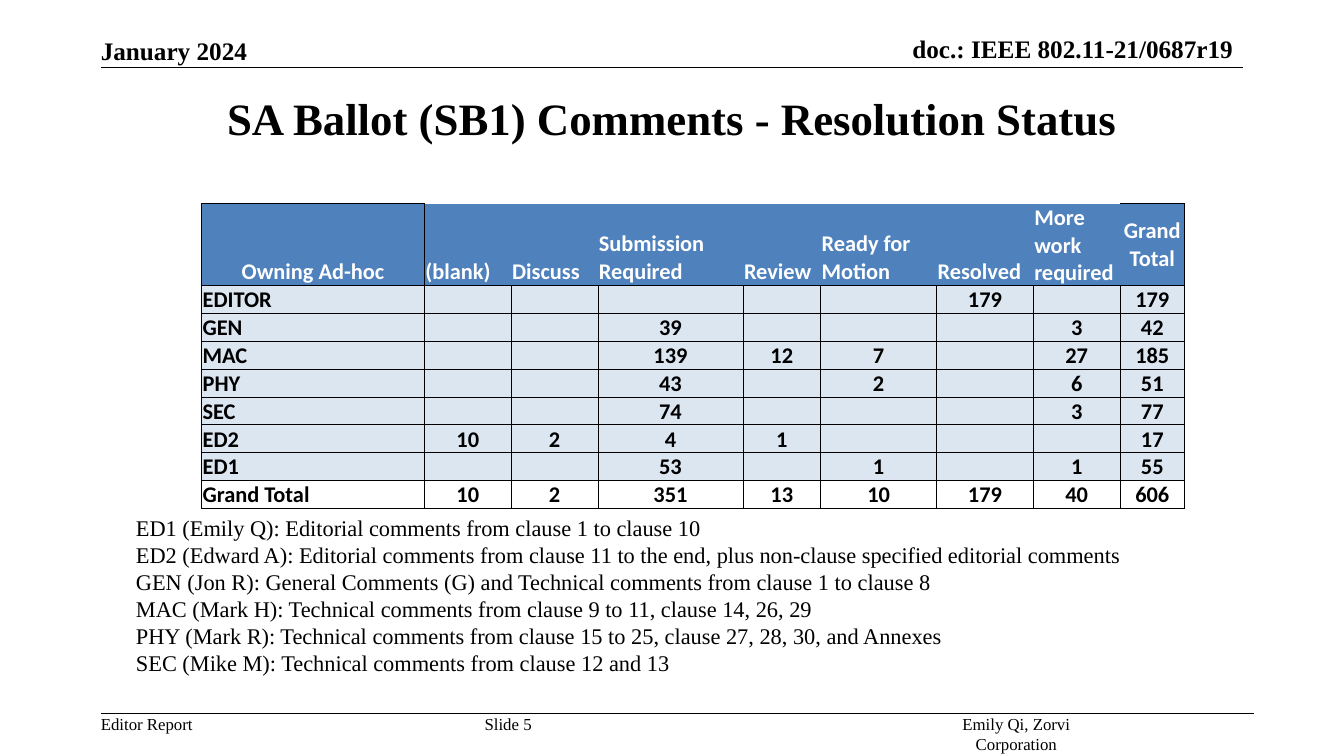
from dataclasses import dataclass

from lxml import etree
from pptx import Presentation
from pptx.dml.color import RGBColor
from pptx.enum.shapes import MSO_CONNECTOR
from pptx.enum.text import MSO_ANCHOR, MSO_AUTO_SIZE, PP_ALIGN
from pptx.oxml.ns import qn
from pptx.util import Emu, Pt

LEFT, CENTER, RIGHT = PP_ALIGN.LEFT, PP_ALIGN.CENTER, PP_ALIGN.RIGHT
TOP, MIDDLE, BOTTOM = MSO_ANCHOR.TOP, MSO_ANCHOR.MIDDLE, MSO_ANCHOR.BOTTOM
FIT_SHAPE, FIXED = MSO_AUTO_SIZE.SHAPE_TO_FIT_TEXT, MSO_AUTO_SIZE.NONE
STRAIGHT = MSO_CONNECTOR.STRAIGHT
EMU_PER_PX = 9144
TITLE_ONLY = 5


@dataclass(frozen=True)
class Theme:
    serif: str = "Times New Roman"
    sans: str = "Calibri"
    ink: str = "000000"
    paper: str = "FFFFFF"
    header: str = "4F81BD"
    band: str = "DCE6F1"
    title: int = 32
    heading: int = 18
    body: int = 16
    footer: int = 12
    rule: float = 1
    grid: float = 0.5


COLUMNS = ["Owning Ad-hoc", "(blank)", "Discuss", "Submission Required", "Review",
           "Ready for Motion", "Resolved", "More work required", "Grand Total"]
COLUMN_WIDTHS = [221, 86, 86, 144, 77, 115, 96, 86, 64]
COMMENT_COUNTS = [
    ["EDITOR", "", "", "", "", "", "179", "", "179"],
    ["GEN", "", "", "39", "", "", "", "3", "42"],
    ["MAC", "", "", "139", "12", "7", "", "27", "185"],
    ["PHY", "", "", "43", "", "2", "", "6", "51"],
    ["SEC", "", "", "74", "", "", "", "3", "77"],
    ["ED2", "10", "2", "4", "1", "", "", "", "17"],
    ["ED1", "", "", "53", "", "1", "", "1", "55"],
    ["Grand Total", "10", "2", "351", "13", "10", "179", "40", "606"],
]
OWNERS = [
    "ED1 (Emily Q): Editorial comments from clause 1 to clause 10",
    "ED2 (Edward A): Editorial comments from clause 11 to the end, plus non-clause specified editorial comments",
    "GEN (Jon R): General Comments (G) and Technical comments from clause 1 to clause 8",
    "MAC (Mark H): Technical comments from clause 9 to 11, clause 14, 26, 29",
    "PHY (Mark R): Technical comments from clause 15 to 25, clause 27, 28, 30, and Annexes",
    "SEC (Mike M): Technical comments from clause 12 and 13",
]


def px(length):
    return Emu(length * EMU_PER_PX)


class SlideBuilder:
    def __init__(self, slide, theme):
        self.slide = slide
        self.theme = theme

    def add_text(self, paragraph, text, size, align=LEFT, bold=False, font=None, color=None):
        paragraph.alignment = align
        run = paragraph.add_run()
        run.text = text
        run.font.name = font or self.theme.serif
        run.font.size = Pt(size)
        run.font.bold = bold
        run.font.color.rgb = RGBColor.from_string(color or self.theme.ink)

    def title(self, text, left, top, width, height):
        shape = self.slide.shapes.title
        shape.left, shape.top, shape.width, shape.height = map(px, (left, top, width, height))
        frame = shape.text_frame
        frame.auto_size = FIXED
        frame.vertical_anchor = MIDDLE
        self.add_text(frame.paragraphs[0], text, self.theme.title, CENTER, True)

    def label(self, text, left, top, width, height, size, align=LEFT, anchor=TOP, bold=False):
        frame = self.slide.shapes.add_textbox(*map(px, (left, top, width, height))).text_frame
        frame.margin_left = frame.margin_right = frame.margin_top = frame.margin_bottom = 0
        frame.word_wrap = False
        frame.auto_size = FIT_SHAPE
        frame.vertical_anchor = anchor
        self.add_text(frame.paragraphs[0], text, size, align, bold)

    def paragraphs(self, lines, left, top, width, height):
        frame = self.slide.shapes.add_textbox(*map(px, (left, top, width, height))).text_frame
        frame.word_wrap = True
        frame.vertical_anchor = MIDDLE
        for index, line in enumerate(lines):
            paragraph = frame.add_paragraph() if index else frame.paragraphs[0]
            self.add_text(paragraph, line, self.theme.body)

    def rule(self, left, right, top):
        line = self.slide.shapes.add_connector(STRAIGHT, *map(px, (left, top, right, top)))
        line.line.color.rgb = RGBColor.from_string(self.theme.ink)
        line.line.width = Pt(self.theme.rule)
        etree.SubElement(line._element.spPr, qn("a:effectLst"))

    def borders(self, cell, visible):
        properties = cell._tc.get_or_add_tcPr()
        for side in "LRTB":
            border = etree.SubElement(properties, qn(f"a:ln{side}"), w=str(Pt(self.theme.grid)))
            if side in visible:
                fill = etree.SubElement(border, qn("a:solidFill"))
                etree.SubElement(fill, qn("a:srgbClr"), val=self.theme.ink)
            else:
                etree.SubElement(border, qn("a:noFill"))

    def cell(self, cell, text, align, anchor, color, fill, visible):
        cell.margin_left = cell.margin_right = cell.margin_top = px(1)
        cell.margin_bottom = 0
        cell.vertical_anchor = anchor
        self.borders(cell, visible)
        if fill:
            cell.fill.solid()
            cell.fill.fore_color.rgb = RGBColor.from_string(fill)
        else:
            cell.fill.background()
        paragraph = cell.text_frame.paragraphs[0]
        if text:
            self.add_text(paragraph, text, self.theme.body, align, True, self.theme.sans, color)
        else:
            etree.SubElement(paragraph._p, qn("a:endParaRPr"), sz=str(self.theme.body * 100))

    def table(self, header, rows, widths, left, top, header_height, row_height):
        height = header_height + row_height * len(rows)
        table = self.slide.shapes.add_table(
            len(rows) + 1, len(header), *map(px, (left, top, sum(widths), height))).table
        table.horz_banding = False
        for column, width in zip(table.columns, widths):
            column.width = px(width)
        for index, row in enumerate(table.rows):
            row.height = px(row_height if index else header_height)
        last = len(header) - 1
        header_borders = {0: "LRTB", 1: "LB", last: "TRB"}
        for index, text in enumerate(header):
            self.cell(table.cell(0, index), text, CENTER if index in (0, last) else LEFT,
                      MIDDLE if index == last else BOTTOM, self.theme.paper,
                      self.theme.header, header_borders.get(index, "B"))
        for row_index, row in enumerate(rows, 1):
            fill = self.theme.band if row_index < len(rows) else None
            for index, text in enumerate(row):
                self.cell(table.cell(row_index, index), text, CENTER if index else LEFT,
                          BOTTOM, self.theme.ink, fill, "LRTB")


def main():
    presentation = Presentation()
    presentation.slide_width, presentation.slide_height = px(1333), px(750)
    slide = presentation.slides.add_slide(presentation.slide_layouts[TITLE_ONLY])
    theme = Theme()
    builder = SlideBuilder(slide, theme)
    builder.label("doc.: IEEE 802.11-21/0687r19", 851, 33, 372, 30, theme.heading, RIGHT, BOTTOM, True)
    builder.label("January 2024", 100, 35, 147, 30, theme.heading, LEFT, BOTTOM, True)
    builder.rule(100, 1233, 67)
    builder.title("SA Ballot (SB1) Comments - Resolution Status", 100, 58, 1133, 117)
    builder.table(COLUMNS, COMMENT_COUNTS, COLUMN_WIDTHS, 200, 202, 80, 27)
    builder.paragraphs(OWNERS, 125, 499, 1158, 183)
    builder.rule(100, 1244, 708)
    builder.label("Editor Report", 100, 708, 92, 20, theme.footer)
    builder.label("Slide 5", 475, 708, 58, 20, theme.footer, CENTER)
    builder.label("Emily Qi, Zorvi Corporation", 914, 708, 188, 20, theme.footer, CENTER)
    presentation.save("out.pptx")


if __name__ == "__main__":
    main()
